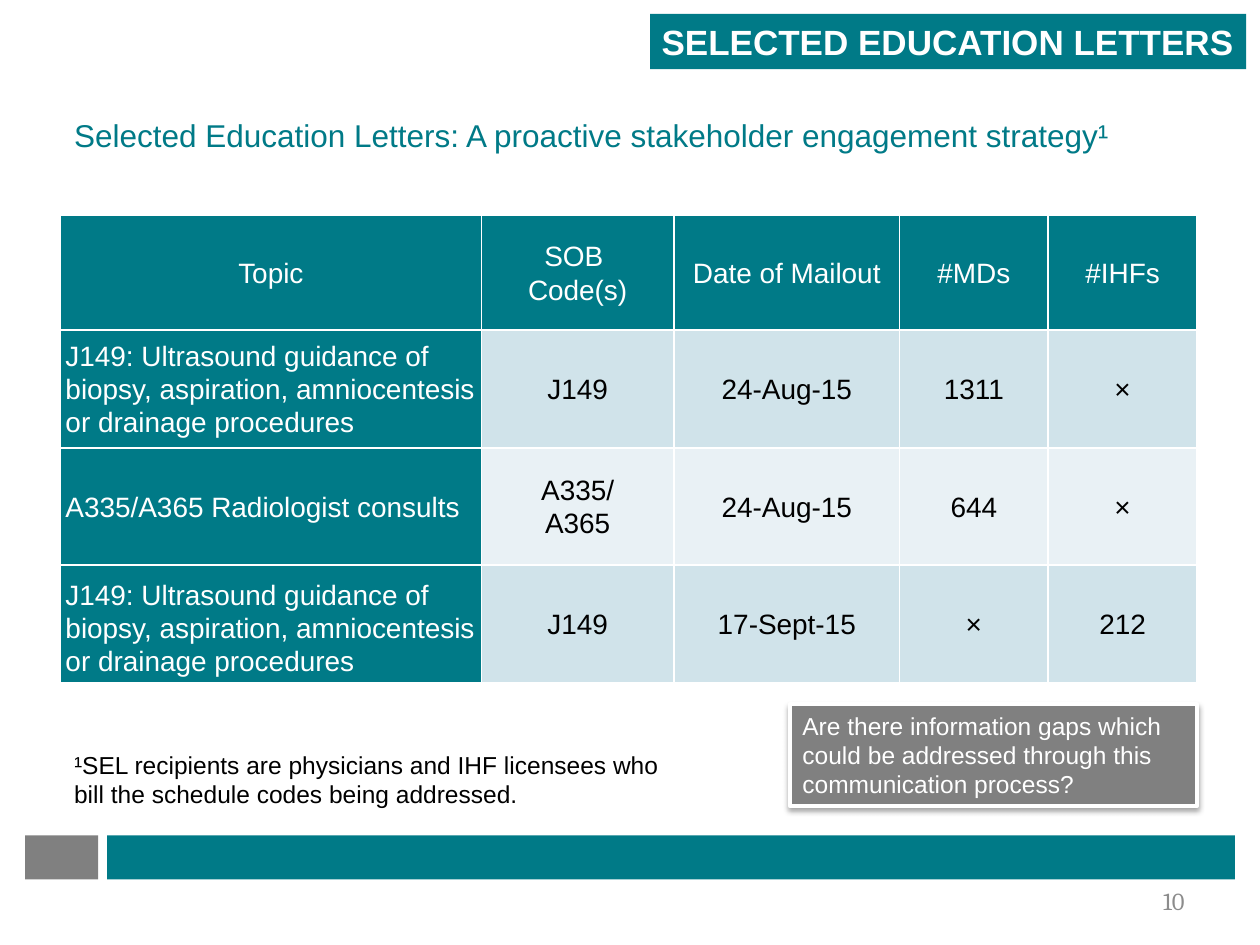
from lxml.etree import SubElement
from pptx import Presentation
from pptx.dml.color import RGBColor
from pptx.enum.shapes import MSO_SHAPE
from pptx.enum.text import MSO_ANCHOR, PP_ALIGN
from pptx.oxml.ns import qn
from pptx.util import Pt

SCALE = 9144
TEAL = RGBColor(0x00, 0x7A, 0x87)
GRAY = RGBColor(0x80, 0x80, 0x80)
PALE = RGBColor(0x8C, 0x8C, 0x8C)
BLACK = RGBColor(0, 0, 0)
WHITE = RGBColor(0xFF, 0xFF, 0xFF)
BANDS = (RGBColor(0xD0, 0xE3, 0xEA), RGBColor(0xE9, 0xF1, 0xF5))

GUIDE = "J149: Ultrasound guidance of biopsy, aspiration, amniocentesis or drainage procedures"
LETTERS = [
    ["Topic", "SOB \nCode(s)", "Date of Mailout", "#MDs", "#IHFs"],
    [GUIDE, "J149", "24-Aug-15", "1311", "×"],
    ["A335/A365 Radiologist consults", "A335/\nA365", "24-Aug-15", "644", "×"],
    [GUIDE, "J149", "17-Sept-15", "×", "212"],
]


def px(*sizes):
    return [size * SCALE for size in sizes]


def write(frame, text, size=14, color=BLACK, font="Arial", bold=False,
          align=PP_ALIGN.LEFT, anchor=MSO_ANCHOR.TOP, wrap=True, spacing=None):
    frame.word_wrap = wrap
    frame.vertical_anchor = anchor
    for index, line in enumerate(text.split("\n")):
        para = frame.add_paragraph() if index else frame.paragraphs[0]
        para.alignment = align
        para.line_spacing = spacing
        run = para.add_run()
        run.text = line
        run.font.size = Pt(size)
        run.font.name = font
        run.font.bold = bold
        run.font.color.rgb = color


class Canvas:
    def __init__(self, slide):
        self.shapes = slide.shapes

    def text(self, box, text, **style):
        label = self.shapes.add_textbox(*px(*box))
        write(label.text_frame, text, **style)

    def rect(self, box, fill, text=None, **style):
        shape = self.shapes.add_shape(MSO_SHAPE.RECTANGLE, *px(*box))
        shape.shadow.inherit = False
        shape.fill.solid()
        shape.fill.fore_color.rgb = fill
        shape.line.fill.background()
        if text:
            write(shape.text_frame, text, **style)
        return shape

    def callout(self, box, text):
        shape = self.rect(box, GRAY, text, color=WHITE)
        shape.line.color.rgb = WHITE
        shape.line.width = Pt(2.25)
        effects = shape._element.spPr.find(qn("a:effectLst"))
        shadow = SubElement(effects, qn("a:outerShdw"), blurRad=str(Pt(3.1)),
                            dist=str(Pt(1.8)), dir="5400000", rotWithShape="0")
        color = SubElement(shadow, qn("a:srgbClr"), val="000000")
        SubElement(color, qn("a:alpha"), val="35000")

    def table(self, box, rows, widths, heights):
        grid = self.shapes.add_table(len(rows), len(widths), *px(*box)).table
        for column, width in zip(grid.columns, px(*widths)):
            column.width = width
        for row, height in zip(grid.rows, px(*heights)):
            row.height = height
        for top, row in enumerate(rows):
            for left, text in enumerate(row):
                self.cell(grid.cell(top, left), text, top, left, top == len(rows) - 1)

    def cell(self, cell, text, top, left, last):
        head = top == 0 or left == 0
        topic = top > 0 and left == 0
        anchor = MSO_ANCHOR.BOTTOM if topic and last else MSO_ANCHOR.MIDDLE
        cell.margin_left = cell.margin_right = 4 * SCALE
        cell.margin_top = cell.margin_bottom = 4 * SCALE
        cell.fill.solid()
        cell.fill.fore_color.rgb = TEAL if head else BANDS[(top - 1) % 2]
        write(cell.text_frame, text, size=16, color=WHITE if head else BLACK,
              align=PP_ALIGN.LEFT if topic else PP_ALIGN.CENTER, spacing=1.07)
        cell.vertical_anchor = anchor


def main():
    deck = Presentation()
    deck.slide_width, deck.slide_height = px(1000, 750)
    page = Canvas(deck.slides.add_slide(deck.slide_layouts[6]))
    page.text((49, 52, 900, 110),
              "Selected Education Letters: A proactive stakeholder engagement strategy¹",
              size=18, color=TEAL, anchor=MSO_ANCHOR.MIDDLE)
    page.text((717, 695, 233, 40), "10", font="Cambria", color=PALE,
              align=PP_ALIGN.RIGHT, anchor=MSO_ANCHOR.MIDDLE)
    page.text((49, 590, 486, 57),
              "¹SEL recipients are physicians and IHF licensees who bill the schedule codes being addressed.")
    page.table((48, 171, 902, 370), LETTERS, (334, 153, 179, 118, 118), (91, 93, 93, 93))
    page.rect((85, 663, 895, 35), TEAL)
    page.rect((20, 663, 58, 35), GRAY)
    page.callout((627, 559, 323, 81),
                 "Are there information gaps which could be addressed through this communication process?")
    page.rect((516, 11, 473, 44), TEAL, "SELECTED EDUCATION LETTERS", size=20,
              color=WHITE, bold=True, align=PP_ALIGN.RIGHT, wrap=False)
    deck.save("out.pptx")


if __name__ == "__main__":
    main()
